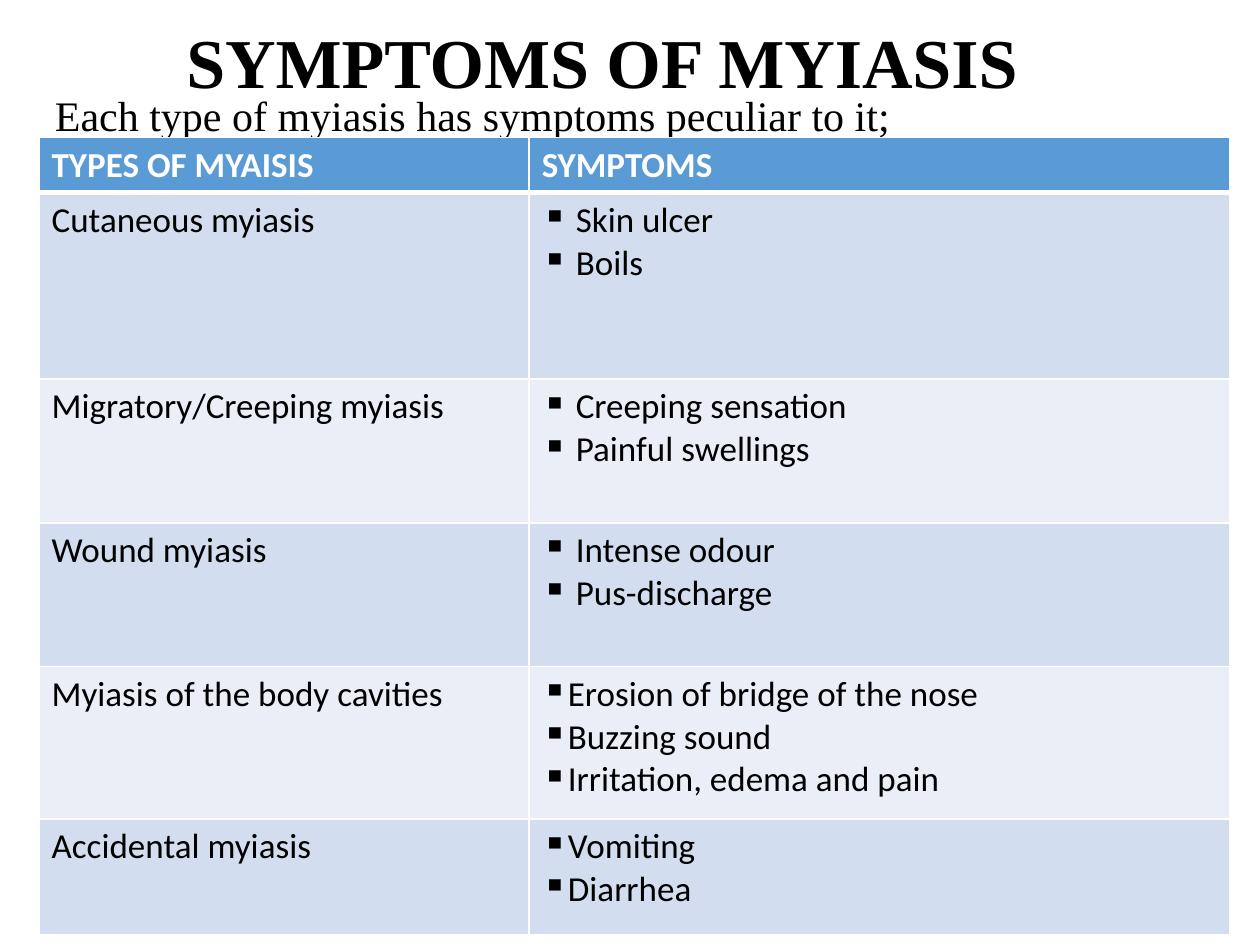
from lxml import etree
from pptx import Presentation
from pptx.dml.color import RGBColor
from pptx.enum.text import MSO_ANCHOR
from pptx.oxml.ns import qn
from pptx.util import Inches, Pt

MIDDLE = MSO_ANCHOR.MIDDLE
TOP = MSO_ANCHOR.TOP
BLANK_LAYOUT = 6
COLORS = {
    "text": "000000",
    "white": "FFFFFF",
    "header": "5B9BD5",
    "odd_row": "D2DEEF",
    "even_row": "EAEFF7",
}
SERIF = "Times New Roman"
SANS = "Calibri"


def add_run(paragraph, text, font, size, color="text", bold=False):
    run = paragraph.add_run()
    run.text = text
    run.font.name = font
    run.font.size = Pt(size)
    run.font.bold = bold
    run.font.color.rgb = RGBColor.from_string(COLORS[color])


def add_text_box(left, top, width, height, anchor):
    shape = slide.shapes.add_textbox(Inches(left), Inches(top), Inches(width), Inches(height))
    shape.text_frame.word_wrap = True
    shape.text_frame.vertical_anchor = anchor
    paragraph = shape.text_frame.paragraphs[0]
    paragraph.line_spacing = 0.9
    return paragraph


presentation = Presentation()
presentation.slide_width = Inches(10)
presentation.slide_height = Inches(7.5)
slide = presentation.slides.add_slide(presentation.slide_layouts[BLANK_LAYOUT])

# Title
title = add_text_box(1.38, 0, 8.62, 1.04, MIDDLE)
add_run(title, "SYMPTOMS OF MYIASIS", SERIF, 40, bold=True)

# Introductory line
intro = add_text_box(0.25, 0.66, 9.75, 6.66, TOP)
intro.space_before = Pt(10)
intro_properties = intro._p.get_or_add_pPr()
intro_properties.set("marL", str(Inches(0.25)))
intro_properties.set("indent", str(Inches(-0.25)))
add_run(intro, " ", SANS, 28)
add_run(intro, "Each type of myiasis has symptoms peculiar to it;", SERIF, 24)

# Symptoms table
rows = [
    ("TYPES OF MYAISIS", ["SYMPTOMS"]),
    ("Cutaneous myiasis", [" Skin ulcer", " Boils"]),
    ("Migratory/Creeping myiasis", [" Creeping sensation", " Painful swellings"]),
    ("Wound myiasis", [" Intense odour", " Pus-discharge"]),
    ("Myiasis of the body cavities",
     ["Erosion of bridge of the nose", "Buzzing sound", "Irritation, edema and pain"]),
    ("Accidental myiasis", ["Vomiting", "Diarrhea"]),
]
column_widths = [3.89, 5.56]
row_heights = [0.44, 1.48, 1.14, 1.14, 1.21, 0.92]
table = slide.shapes.add_table(
    len(rows), len(column_widths), Inches(0.31), Inches(1.09),
    Inches(sum(column_widths)), Inches(sum(row_heights))).table
for column, width in zip(table.columns, column_widths):
    column.width = Inches(width)
for row, height in zip(table.rows, row_heights):
    row.height = Inches(height)

for row_index, (myiasis_type, symptoms) in enumerate(rows):
    is_header = row_index == 0
    fill = "header" if is_header else ("odd_row" if row_index % 2 else "even_row")
    for column_index, lines in enumerate([[myiasis_type], symptoms]):
        cell = table.cell(row_index, column_index)
        cell.fill.solid()
        cell.fill.fore_color.rgb = RGBColor.from_string(COLORS[fill])

        # Cell text, bulleted in the symptoms column
        for line_index, line in enumerate(lines):
            frame = cell.text_frame
            paragraph = frame.add_paragraph() if line_index else frame.paragraphs[0]
            if column_index == 1 and not is_header:
                properties = paragraph._p.get_or_add_pPr()
                etree.SubElement(properties, qn("a:buChar"), char="▪")
            add_run(paragraph, line, SANS, 20, "white" if is_header else "text", is_header)

        # White borders, thicker under the header
        border_widths = {
            "a:lnL": 1,
            "a:lnR": 1,
            "a:lnT": 3 if row_index == 1 else 1,
            "a:lnB": 3 if is_header else 1,
        }
        cell_properties = cell._tc.get_or_add_tcPr()
        for position, (tag, width) in enumerate(border_widths.items()):
            border = etree.Element(qn(tag), w=str(Pt(width)))
            border_fill = etree.SubElement(border, qn("a:solidFill"))
            etree.SubElement(border_fill, qn("a:srgbClr"), val=COLORS["white"])
            cell_properties.insert(position, border)

presentation.save("out.pptx")
